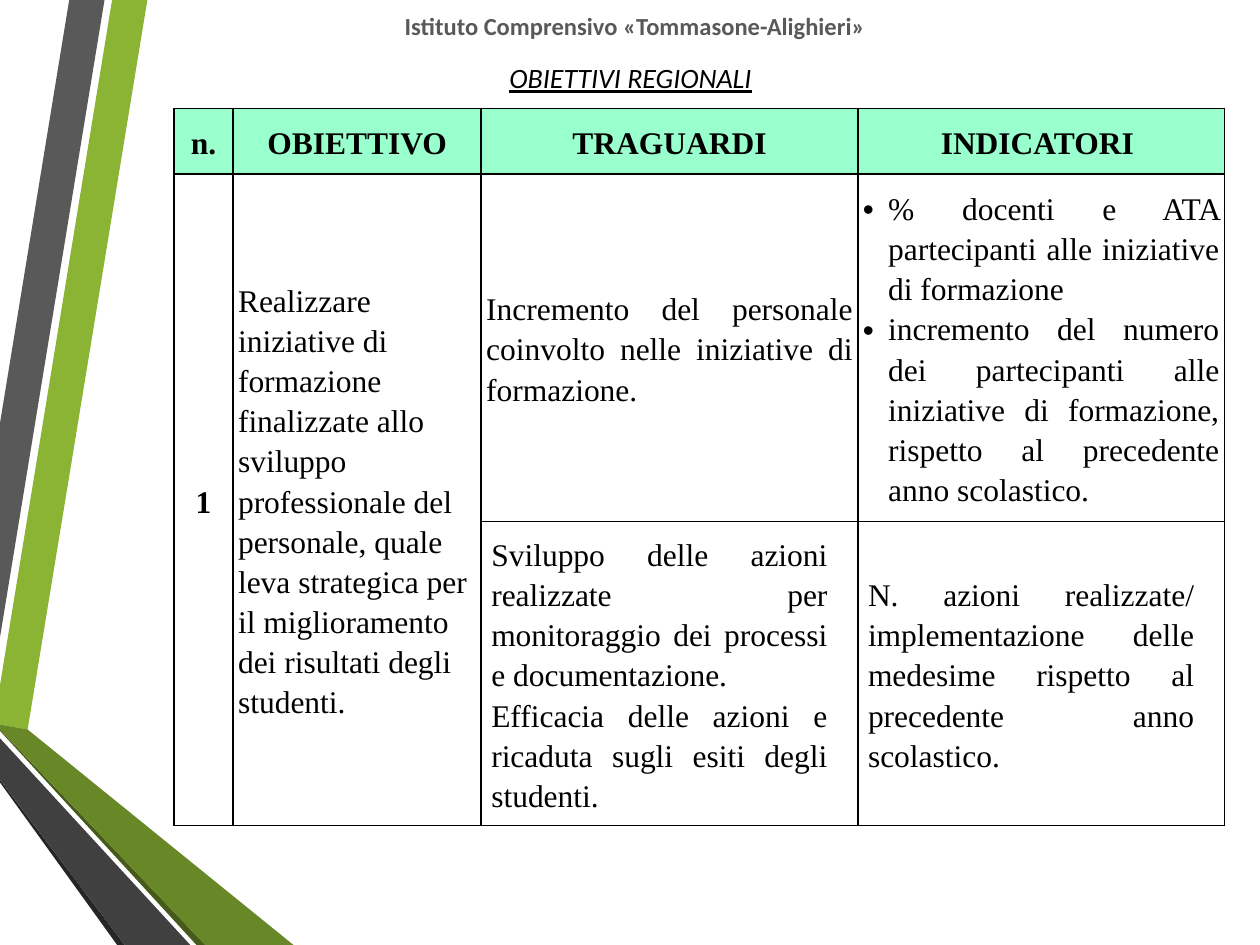
"""Build the slide of regional goals with its table and side ribbons."""
import lxml.etree
import pptx
import pptx.dml.color
import pptx.enum.text
import pptx.oxml.ns
import pptx.util

Inches = pptx.util.Inches
Pt = pptx.util.Pt
Align = pptx.enum.text.PP_ALIGN
Anchor = pptx.enum.text.MSO_ANCHOR
LEFT, MID, FULL = Align.LEFT, Align.CENTER, Align.JUSTIFY

RIBBONS = [
    ("8BB434", [(0, 5.44), (0, 5.75), (0.22, 5.79), (1.17, 0), (0.89, 0)]),
    ("595959", [(0.83, 0), (0.55, 0), (0, 3.36), (0, 5.06)]),
    ("262626", [(0, 6.19), (0, 6.21), (0.93, 7.5), (0.99, 7.5)]),
    ("465A1A", [(0, 5.79), (0, 5.8), (1.56, 7.5), (1.63, 7.5)]),
    ("688727", [(0, 5.79), (1.63, 7.5), (2.33, 7.5), (0.22, 5.79), (0, 5.75)]),
    ("404040", [(0, 6.19), (0.99, 7.5), (1.51, 7.5), (0, 5.86)]),
]
COLS = [0.47, 1.97, 2.99, 2.91]
ROWS = [0.52, 2.75, 2.41]
HEADS = ["n.", "OBIETTIVO", "TRAGUARDI", "INDICATORI "]
SERIF = {"name": "Times New Roman", "size": Pt(18), "bold": False}
STRONG = {**SERIF, "bold": True}
BULLET = {"marL": Inches(0.2), "indent": Inches(-0.2)}
INSET = {"marL": Inches(0.04), "marR": Inches(0.2), "indent": 0}
BODY = [
    (1, 0, ["1"], STRONG, MID, {}),
    (1, 1, ["Realizzare iniziative di formazione finalizzate allo sviluppo "
            "professionale del personale, quale leva strategica per il "
            "miglioramento dei risultati degli studenti."], SERIF, LEFT, {}),
    (1, 2, ["Incremento del personale coinvolto nelle iniziative di "
            "formazione."], SERIF, FULL, {}),
    (1, 3, ["% docenti e ATA partecipanti alle iniziative di formazione ",
            "incremento del numero dei partecipanti alle iniziative di "
            "formazione, rispetto al precedente anno scolastico."],
     SERIF, FULL, BULLET),
    (2, 2, ["Sviluppo delle azioni realizzate per monitoraggio dei processi "
            "e documentazione.",
            "Efficacia delle azioni e ricaduta sugli esiti degli studenti."],
     SERIF, FULL, INSET),
    (2, 3, ["N. azioni realizzate/ implementazione delle medesime rispetto "
            "al precedente anno scolastico."], SERIF, FULL, INSET),
]


def assign(item, values):
    """Set each attribute in values on the item."""
    for key, value in values.items():
        setattr(item, key, value)


def paint(fill, tint):
    """Give a fill one solid colour from a hex string."""
    fill.solid()
    fill.fore_color.rgb = pptx.dml.color.RGBColor.from_string(tint)


def add_node(parent, tag, **attrs):
    """Append a drawing element and return it."""
    name = pptx.oxml.ns.qn("a:" + tag)
    return lxml.etree.SubElement(parent, name, attrs)


def write(para, text, font, tint, align):
    """Put one styled run in a paragraph."""
    para.alignment = align
    run = para.add_run()
    run.text = text
    assign(run.font, font)
    paint(run.font.fill, tint)


def add_ribbon(slide, tint, points):
    """Draw one closed ribbon through points in inches."""
    first, *rest = [(Inches(x), Inches(y)) for x, y in points]
    pen = slide.shapes.build_freeform(*first)
    pen.add_line_segments(rest, close=True)
    shape = pen.convert_to_shape()
    shape.shadow.inherit = False
    paint(shape.fill, tint)
    shape.line.fill.background()


def add_label(slide, box, text, font, tint):
    """Add a centred line of text."""
    frame = slide.shapes.add_textbox(*map(Inches, box)).text_frame
    assign(frame, {"word_wrap": True,
                   "auto_size": pptx.enum.text.MSO_AUTO_SIZE.SHAPE_TO_FIT_TEXT})
    write(frame.paragraphs[0], text, font, tint, MID)


def frame_cell(cell):
    """Draw thin black borders and clear the fill of a cell."""
    props = cell._tc.get_or_add_tcPr()
    for side in ("lnL", "lnR", "lnT", "lnB"):
        line = add_node(props, side, w=str(Pt(1)))
        add_node(add_node(line, "solidFill"), "srgbClr", val="000000")
    cell.fill.background()
    assign(cell, {"margin_left": Inches(0.04), "margin_right": Inches(0.04),
                  "margin_top": 0, "margin_bottom": 0,
                  "vertical_anchor": Anchor.MIDDLE})


def fill_cell(cell, texts, font, align, indent):
    """Write the paragraphs of a cell with their indents."""
    frame = cell.text_frame
    for num, text in enumerate(texts):
        para = frame.add_paragraph() if num else frame.paragraphs[0]
        write(para, text, font, "000000", align)
        para.line_spacing = 1.15
        props = para._p.get_or_add_pPr()
        for key, value in indent.items():
            props.set(key, str(value))
        if indent is BULLET:
            add_node(props, "buFont", typeface="Arial")
            add_node(props, "buChar", char="•")


def add_grid(slide):
    """Add the table of goals, targets and measures."""
    box = map(Inches, (1.38, 0.86, sum(COLS), sum(ROWS)))
    grid = slide.shapes.add_table(len(ROWS), len(COLS), *box).table
    assign(grid, {"first_row": False, "horz_banding": False})
    for col, width in zip(grid.columns, COLS):
        col.width = Inches(width)
    for row, height in zip(grid.rows, ROWS):
        row.height = Inches(height)
    for cell in grid.iter_cells():
        frame_cell(cell)
    for col in (0, 1):
        grid.cell(1, col).merge(grid.cell(2, col))
    for col, head in enumerate(HEADS):
        cell = grid.cell(0, col)
        paint(cell.fill, "99FFCC")
        fill_cell(cell, [head], STRONG, MID, {})
    for row, col, *parts in BODY:
        fill_cell(grid.cell(row, col), *parts)


def main():
    """Build and save the slide."""
    deck = pptx.Presentation()
    assign(deck, {"slide_width": Inches(10), "slide_height": Inches(7.5)})
    slide = deck.slides.add_slide(deck.slide_layouts[6])
    for tint, points in RIBBONS:
        add_ribbon(slide, tint, points)
    add_label(slide, (0.91, 0.43, 8.19, 0.37), "OBIETTIVI REGIONALI",
              {"name": "Calibri", "size": Pt(16), "italic": True,
               "underline": True}, "000000")
    add_label(slide, (1.14, 0.04, 7.8, 0.34),
              "Istituto Comprensivo «Tommasone-Alighieri»",
              {"name": "Calibri", "size": Pt(14), "bold": True}, "595959")
    add_grid(slide)
    deck.save("out.pptx")


if __name__ == "__main__":
    main()
